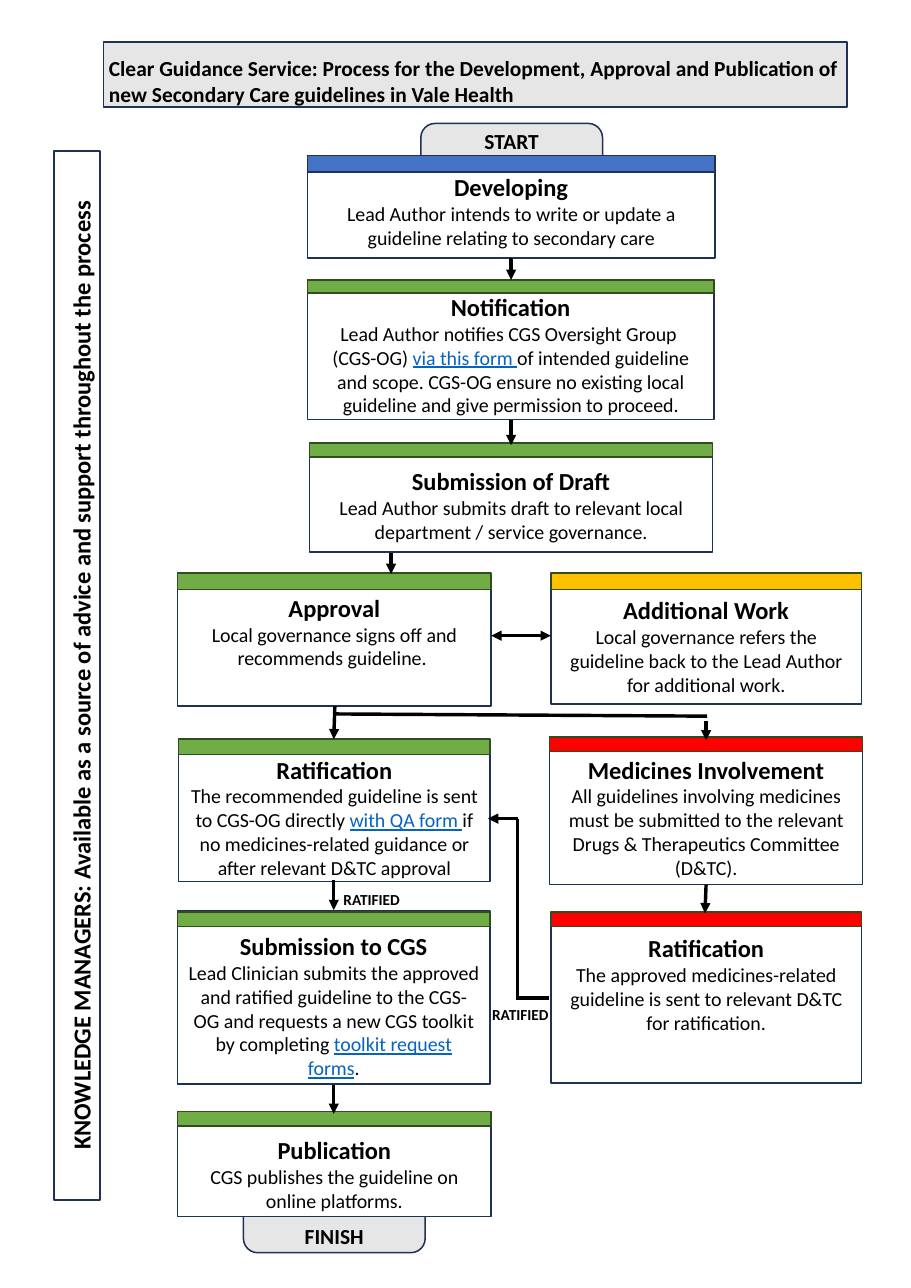
from dataclasses import dataclass

from lxml.etree import SubElement
from pptx import Presentation
from pptx.dml.color import RGBColor
from pptx.enum.shapes import MSO_CONNECTOR, MSO_SHAPE
from pptx.enum.text import MSO_ANCHOR as ANCHOR, PP_ALIGN as ALIGN
from pptx.oxml.ns import qn
from pptx.util import Inches, Pt

COLS, ROWS = 82.7, 116.9
CELL = Inches(0.1)
BLACK, WHITE, GREY, NAVY = "000000", "FFFFFF", "E7E6E6", "1E3256"
BLUE, GREEN, AMBER, RED = "4472C4", "70AD47", "FFC000", "FF0000"
MOSS, LINK = "314C1F", "0563C1"


@dataclass
class Area:
    left: float
    top: float
    width: float
    height: float


@dataclass
class Step:
    title: str
    body: str
    area: Area
    bar_top: float
    bar_height: float
    bar: str
    inset: float


@dataclass
class Line:
    x1: float
    y1: float
    x2: float
    y2: float
    head: bool = False
    tail: bool = True


@dataclass
class Caption:
    text: str
    area: Area
    size: int


STEPS = [
    Step("Developing", "Lead Author intends to write or update a guideline relating to secondary care",
         Area(27.9, 14.2, 37, 9.2), 14.1, 1.5, BLUE, 1.4),
    Step("Notification", "Lead Author notifies CGS Oversight Group \n(CGS-OG) |via this form |of intended "
         "guideline and scope. CGS-OG ensure no existing local guideline and give permission to proceed.",
         Area(27.9, 25.4, 36.9, 12.7), 25.4, 1.2, GREEN, 1.1),
    Step("Submission of Draft", "Lead Author submits draft to relevant local department / service governance.",
         Area(28.1, 40.5, 36.6, 9.6), 40.2, 1.3, GREEN, 1.8),
    Step("Approval", "Local governance signs off and recommends guideline. ",
         Area(16.1, 52.2, 28.5, 11.9), 52, 1.5, GREEN, 1.6),
    Step("Additional Work", "Local governance refers the guideline back to the Lead Author for additional work.",
         Area(50, 52.4, 28.2, 11.5), 52, 1.5, AMBER, 1.6),
    Step("Ratification", "The recommended guideline is sent to CGS-OG directly |with QA form |if no "
         "medicines-related guidance or after relevant D&TC approval",
         Area(16.2, 67.2, 28.3, 12.8), 67.1, 1.4, GREEN, 1.3),
    Step("Medicines Involvement", "All guidelines involving medicines must be submitted to the relevant "
         "Drugs & Therapeutics Committee (D&TC).",
         Area(49.9, 67.4, 28.4, 12.9), 66.9, 1.3, RED, 1.1),
    Step("Submission to CGS", "Lead Clinician submits the approved and ratified guideline to the CGS-OG and "
         "requests a new CGS toolkit by completing |toolkit request forms|.",
         Area(16.1, 82.7, 28.4, 15.7), 82.8, 1.3, GREEN, 1.8),
    Step("Ratification", "The approved medicines-related guideline is sent to relevant D&TC for ratification.",
         Area(50, 82.9, 28.2, 15.4), 82.8, 1.3, RED, 1.8),
    Step("Publication", "CGS publishes the guideline on online platforms.",
         Area(16.1, 101.2, 28.5, 9.2), 100.9, 1.3, GREEN, 1.8),
]
LINES = [
    Line(46.4, 23.4, 46.4, 25.4), Line(46.4, 38.1, 46.4, 40.4), Line(35.5, 50.2, 35.5, 52.1),
    Line(44.6, 57.7, 50, 57.7, head=True), Line(30.4, 64.1, 30.3, 67.1),
    Line(30.5, 64.8, 64.2, 65, tail=False), Line(64.1, 65.4, 64.1, 67.2),
    Line(30.3, 79.9, 30.3, 82.6), Line(64.1, 80.3, 64, 82.9), Line(30.3, 98.5, 30.3, 101.1),
    Line(46.8, 90.6, 49.8, 90.6, tail=False), Line(47, 74.3, 47, 90.6, tail=False),
    Line(44.3, 74.3, 47, 74.3, head=True, tail=False),
]
CAPTIONS = [
    Caption("Clear Guidance Service: Process for the Development, Approval and Publication of new "
            "Secondary Care guidelines in Vale Health", Area(8.9, 4.5, 68.6, 5.7), 14),
    Caption("RATIFIED", Area(30.2, 80.3, 8, 2.7), 10),
    Caption("RATIFIED", Area(43.7, 90.7, 8, 2.7), 10),
]


def cells(n: float) -> int:
    """Convert grid cells to a slide length."""
    return round(n * CELL)


def color(value: str) -> RGBColor:
    """Turn a hex string into a colour."""
    return RGBColor.from_string(value)


def assign(obj, values: dict) -> None:
    """Set each named attribute of an object."""
    for name, value in values.items():
        setattr(obj, name, value)


def place(area: Area) -> list[int]:
    """Give the slide lengths of an area."""
    return [cells(n) for n in (area.left, area.top, area.width, area.height)]


def add_box(slide, area: Area, fill: str, line: str = NAVY, kind=MSO_SHAPE.RECTANGLE):
    """Draw a filled and outlined shape."""
    sp = slide.shapes.add_shape(kind, *place(area))
    sp.shadow.inherit = False
    sp.fill.solid()
    sp.fill.fore_color.rgb = color(fill)
    sp.line.color.rgb = color(line)
    sp.line.width = Pt(1)
    return sp


def add_run(p, text: str, size: int, bold: bool = True, link: bool = False) -> None:
    """Append one formatted run to a paragraph."""
    r = p.add_run()
    r.text = text
    assign(r.font, {"name": "Calibri", "size": Pt(size), "bold": bold, "underline": link})
    r.font.color.rgb = color(LINK if link else BLACK)


def write(sp, text: str, size: int, align=ALIGN.CENTER, **frame):
    """Put a bold first paragraph in a shape and return its frame."""
    tf = sp.text_frame
    assign(tf, {"word_wrap": True, "vertical_anchor": ANCHOR.TOP, **frame})
    p = tf.paragraphs[0]
    p.alignment = align
    add_run(p, text, size)
    return tf


def add_step(slide, step: Step) -> None:
    """Draw a process step with its coloured bar."""
    sp = add_box(slide, step.area, WHITE)
    tf = write(sp, step.title, 16, margin_top=cells(step.inset), margin_bottom=0)
    for text in step.body.split("\n"):
        p = tf.add_paragraph()
        p.alignment = ALIGN.CENTER
        for i, part in enumerate(text.split("|")):
            add_run(p, part, 13, bold=False, link=i % 2 == 1)
    bar = Area(step.area.left, step.bar_top, step.area.width, step.bar_height)
    add_box(slide, bar, step.bar, NAVY if step.bar == BLUE else MOSS)


def add_line(slide, line: Line) -> None:
    """Draw a connector with optional arrowheads."""
    ends = [cells(n) for n in (line.x1, line.y1, line.x2, line.y2)]
    cx = slide.shapes.add_connector(MSO_CONNECTOR.STRAIGHT, *ends)
    cx.line.color.rgb = color(BLACK)
    cx.line.width = Pt(2.25)
    for tag, shown in (("a:headEnd", line.head), ("a:tailEnd", line.tail)):
        if shown:
            SubElement(cx.line._get_or_add_ln(), qn(tag), type="triangle")
    SubElement(cx._element.spPr, qn("a:effectLst"))


def main() -> None:
    """Build the guideline process chart."""
    prs = Presentation()
    assign(prs, {"slide_width": cells(COLS), "slide_height": cells(ROWS)})
    slide = prs.slides.add_slide(prs.slide_layouts[6])
    for text, left, top, anchor in (("START", 38.2, 11.2, ANCHOR.TOP), ("FINISH", 22.1, 105.9, ANCHOR.BOTTOM)):
        sp = add_box(slide, Area(left, top, 16.5, 7.8), GREY, kind=MSO_SHAPE.ROUNDED_RECTANGLE)
        write(sp, text, 14, vertical_anchor=anchor, margin_top=0, margin_bottom=0)
    add_box(slide, Area(9.4, 3.8, 67.5, 5.9), GREY)
    for step in STEPS:
        add_step(slide, step)
    side = add_box(slide, Area(4.9, 13.7, 4.2, 95.2), WHITE)
    tf = write(side, "KNOWLEDGE MANAGERS: Available as a source of advice and support throughout the process",
               16, margin_left=cells(1.1), margin_right=0)
    tf._txBody.bodyPr.set("vert", "vert270")
    for line in LINES:
        add_line(slide, line)
    for cap in CAPTIONS:
        write(slide.shapes.add_textbox(*place(cap.area)), cap.text, cap.size, ALIGN.LEFT)
    prs.save("out.pptx")


if __name__ == "__main__":
    main()
